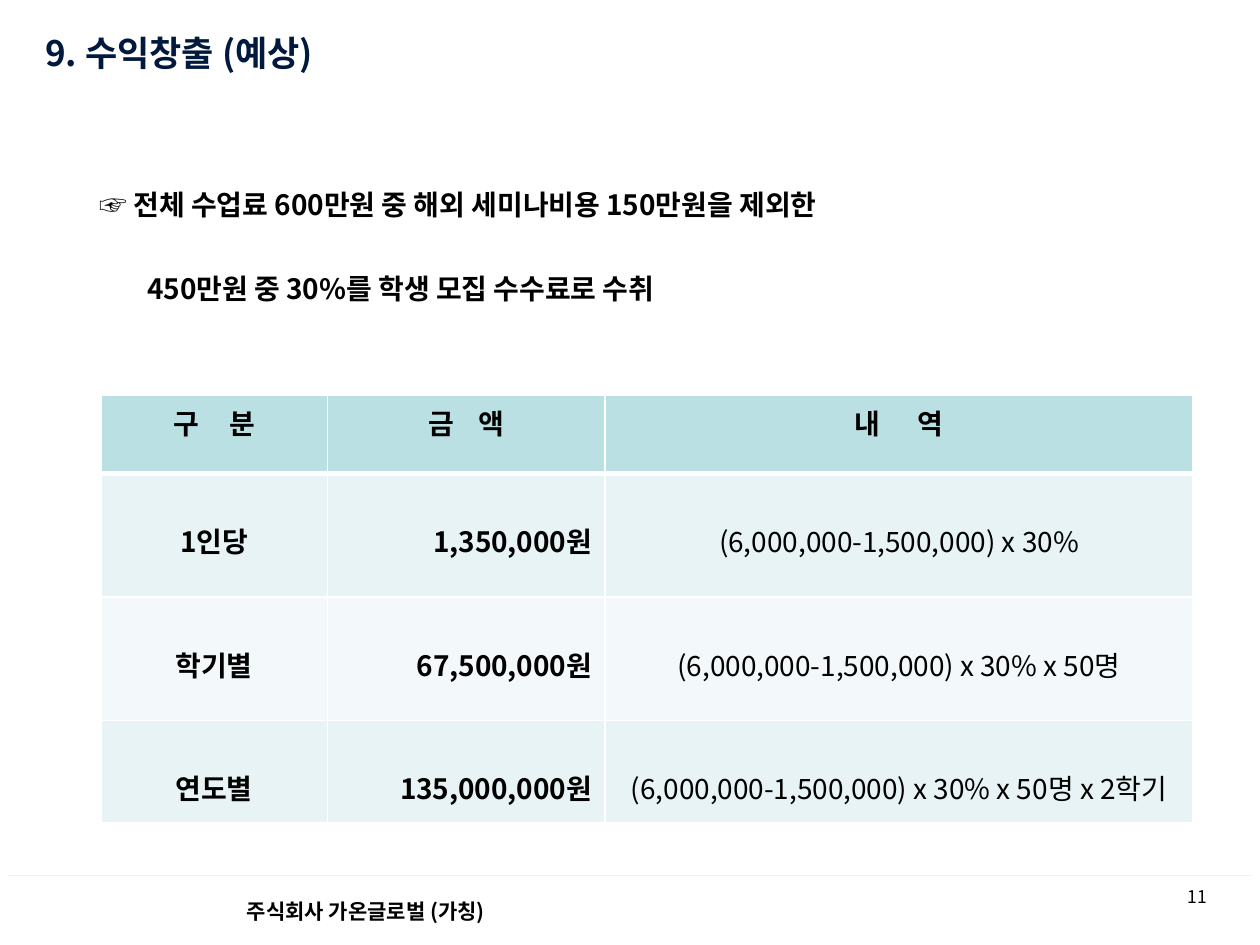
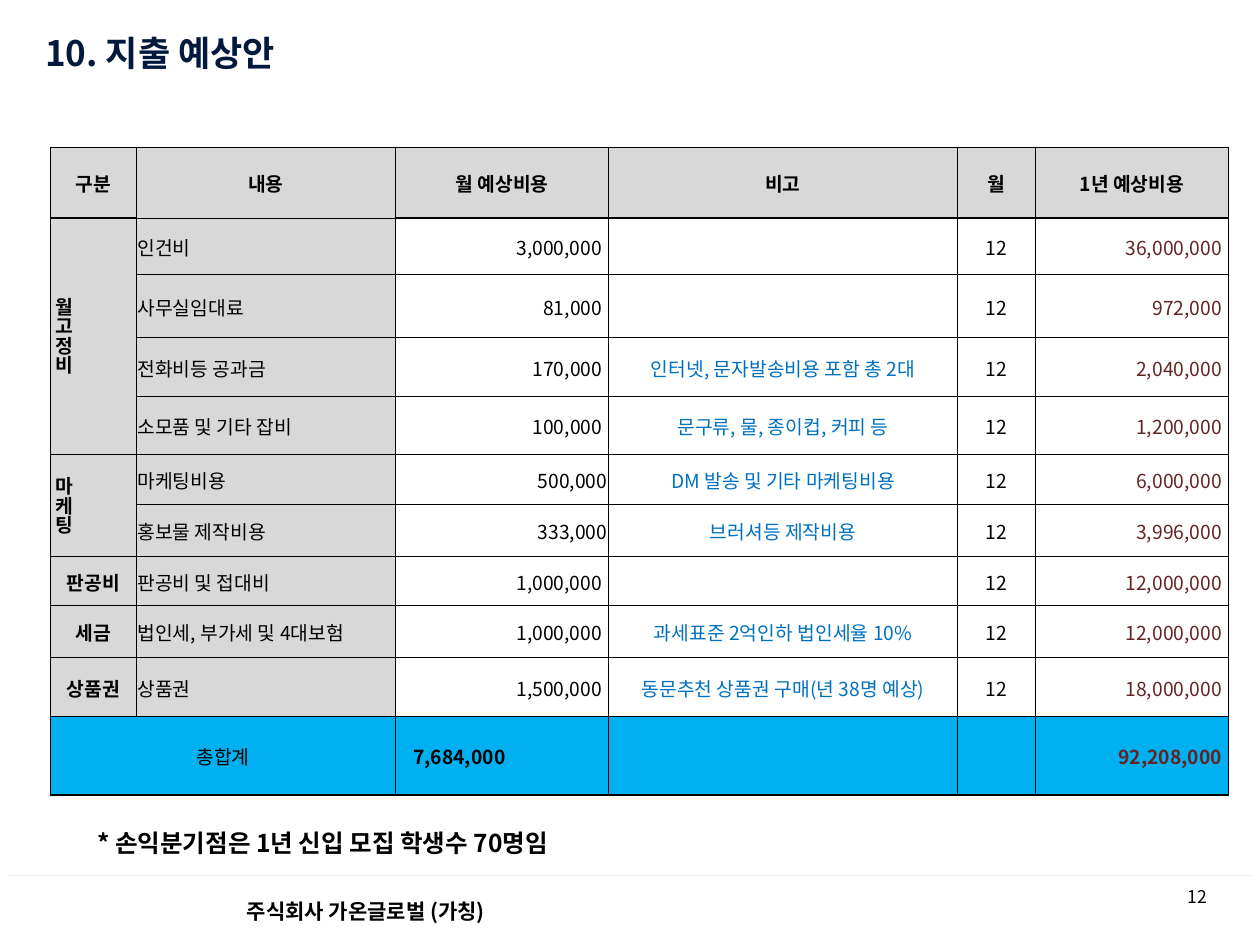
from lxml import etree
from pptx import Presentation
from pptx.dml.color import RGBColor
from pptx.enum.shapes import MSO_CONNECTOR, MSO_SHAPE
from pptx.enum.text import MSO_ANCHOR, PP_ALIGN
from pptx.oxml.ns import qn
from pptx.util import Inches, Pt

LEFT, CENTER, RIGHT = PP_ALIGN.LEFT, PP_ALIGN.CENTER, PP_ALIGN.RIGHT
TOP, MIDDLE = MSO_ANCHOR.TOP, MSO_ANCHOR.MIDDLE
STRAIGHT = MSO_CONNECTOR.STRAIGHT
RECTANGLE = MSO_SHAPE.RECTANGLE

FONT = "Noto Sans CJK KR"
BLACK = RGBColor(0x00, 0x00, 0x00)
WHITE = RGBColor(0xFF, 0xFF, 0xFF)
NAVY = RGBColor(0x00, 0x19, 0x3C)
RULE_GRAY = RGBColor(0xF0, 0xF0, 0xF0)
TEAL = RGBColor(0xBB, 0xE0, 0xE3)
TEAL_LIGHT = RGBColor(0xE7, 0xF3, 0xF4)
TEAL_PALE = RGBColor(0xF3, 0xF9, 0xFA)
GRAY = RGBColor(0xD8, 0xD8, 0xD8)
SKY = RGBColor(0x00, 0xB0, 0xF0)
BLUE = RGBColor(0x00, 0x70, 0xC0)
MAROON = RGBColor(0x63, 0x25, 0x23)

COMPANY = "주식회사 가온글로벌 (가칭)"

REVENUE_HEADERS = [("구", "분", 7), ("금", "액", 5), ("내", "역", 9)]
REVENUE_ROWS = [
    ("1인당", "1,350,000원", "(6,000,000-1,500,000) x 30%"),
    ("학기별", "67,500,000원", "(6,000,000-1,500,000) x 30% x 50명"),
    ("연도별", "135,000,000원", "(6,000,000-1,500,000) x 30% x 50명 x 2학기"),
]
COST_ROWS = [
    ("구분", "내용", "월 예상비용", "비고", "월", "1년 예상비용"),
    ("월고정비", "인건비", "3,000,000", "", "12", "36,000,000"),
    ("", "사무실임대료", "81,000", "", "12", "972,000"),
    ("", "전화비등 공과금", "170,000", "인터넷, 문자발송비용 포함 총 2대", "12", "2,040,000"),
    ("", "소모품 및 기타 잡비", "100,000", "문구류, 물, 종이컵, 커피 등", "12", "1,200,000"),
    ("마케팅", "마케팅비용", "500,000", "DM 발송 및 기타 마케팅비용", "12", "6,000,000"),
    ("", "홍보물 제작비용", "333,000", "브러셔등 제작비용", "12", "3,996,000"),
    ("판공비", "판공비 및 접대비", "1,000,000", "", "12", "12,000,000"),
    ("세금", "법인세, 부가세 및 4대보험", "1,000,000", "과세표준 2억인하 법인세율 10%", "12", "12,000,000"),
    ("상품권", "상품권", "1,500,000", "동문추천 상품권 구매(년 38명 예상)", "12", "18,000,000"),
    ("총합계", "", "7,684,000", "", "", "92,208,000"),
]
COST_ALIGNS = [CENTER, LEFT, RIGHT, CENTER, CENTER, RIGHT]
COST_COLORS = [BLACK, BLACK, BLACK, BLUE, BLACK, MAROON]
TOTAL_ROW = len(COST_ROWS) - 1
MARKETING_ROWS = (5, 6)


class Deck:
    def __init__(self):
        self.prs = Presentation()
        self.prs.slide_width = Inches(10)
        self.prs.slide_height = Inches(7.5)
        self.s = None

    def new_slide(self, title, number):
        self.s = self.prs.slides.add_slide(self.prs.slide_layouts[6])
        self.line(0.06, 6.95, 9.94, 6.95, RULE_GRAY, 0.75)
        self.text(9.27, 6.98, 0.47, 0.31, [str(number)], 10, align=CENTER)
        self.footer()
        self.text(0.26, 0.13, 7.18, 0.58, [title], 20, NAVY, True, anchor=MIDDLE)

    def format(self, p, size, color=BLACK, bold=False, align=LEFT):
        p.alignment = align
        for r in p.runs:
            r.font.size = Pt(size)
            r.font.bold = bold
            r.font.color.rgb = color
            r.font.name = FONT
            etree.SubElement(r.font._element, qn("a:ea"), typeface=FONT)

    def line(self, x1, y1, x2, y2, color, width):
        sp = self.s.shapes.add_connector(
            STRAIGHT, Inches(x1), Inches(y1), Inches(x2), Inches(y2))
        sp.line.color.rgb = color
        sp.line.width = Pt(width)
        etree.SubElement(sp._element.spPr, qn("a:effectLst"))

    def footer(self):
        sp = self.s.shapes.add_shape(
            RECTANGLE, 0, Inches(6.99), Inches(7.75), Inches(0.48))
        sp.shadow.inherit = False
        sp.fill.solid()
        sp.fill.fore_color.rgb = WHITE
        sp.line.fill.background()
        tf = sp.text_frame
        tf.text = COMPANY
        tf.margin_left = Inches(1.96)
        tf.vertical_anchor = MIDDLE
        self.format(tf.paragraphs[0], 12, bold=True)

    def text(self, x, y, w, h, lines, size, color=BLACK, bold=False,
             align=LEFT, anchor=TOP):
        sp = self.s.shapes.add_textbox(Inches(x), Inches(y), Inches(w), Inches(h))
        tf = sp.text_frame
        tf.word_wrap = True
        tf.vertical_anchor = anchor
        tf.text = "\n".join(lines)
        for p in tf.paragraphs:
            self.format(p, size, color, bold, align)
        return tf

    def table(self, x, y, widths, heights):
        table = self.s.shapes.add_table(
            len(heights), len(widths), Inches(x), Inches(y),
            Inches(sum(widths)), Inches(sum(heights))).table
        table.first_row = table.horz_banding = False
        for column, width in zip(table.columns, widths):
            column.width = Inches(width)
        for row, height in zip(table.rows, heights):
            row.height = Inches(height)
        return table

    def cell(self, cell, text, size, fill, color=BLACK, bold=False,
             align=CENTER, anchor=TOP, margins=(0.1, 0.05, 0.1, 0.05)):
        cell.margin_left, cell.margin_top, cell.margin_right, cell.margin_bottom = map(
            Inches, margins)
        cell.vertical_anchor = anchor
        cell.fill.solid()
        cell.fill.fore_color.rgb = fill
        cell.text = text
        self.format(cell.text_frame.paragraphs[0], size, color, bold, align)

    def borders(self, cell, color, left, right, top, bottom):
        tcPr = cell._tc.get_or_add_tcPr()
        for i, (side, width) in enumerate(zip("LRTB", (left, right, top, bottom))):
            ln = etree.Element(qn(f"a:ln{side}"), w=str(Pt(width)))
            fill = etree.SubElement(ln, qn("a:solidFill"))
            etree.SubElement(fill, qn("a:srgbClr"), val=str(color))
            tcPr.insert(i, ln)


def build_revenue(deck):
    deck.new_slide("9. 수익창출 (예상)", 11)
    tf = deck.text(0.69, 1.31, 9.31, 2.86, [
        "☞ 전체 수업료 600만원 중 해외 세미나비용 150만원을 제외한",
        "450만원 중 30%를 학생 모집 수수료로 수취",
    ], 16, bold=True)
    for p, spacing, indent in zip(tf.paragraphs, (1.5, 2.5), (-0.38, 0)):
        p.line_spacing = spacing
        pPr = p._p.get_or_add_pPr()
        pPr.set("marL", str(Inches(0.38)))
        pPr.set("indent", str(Inches(indent)))

    table = deck.table(0.8, 3.14, [1.8, 2.2, 4.67], [0.62, 0.98, 0.98, 0.81])
    for col, (first, last, spread) in enumerate(REVENUE_HEADERS):
        cell = table.cell(0, col)
        deck.cell(cell, first + " ", 16, TEAL, bold=True)
        p = cell.text_frame.paragraphs[0]
        p.runs[0].font._element.set("spc", str(spread * 100))
        r = p.add_run()
        r.text = last
        deck.format(p, 16, bold=True, align=CENTER)
        deck.borders(cell, WHITE, 1, 1, 1, 3)
    for row, values in enumerate(REVENUE_ROWS, 1):
        for col, value in enumerate(values):
            cell = table.cell(row, col)
            deck.cell(cell, value, 16, TEAL_LIGHT if row % 2 else TEAL_PALE,
                      bold=col < 2, align=RIGHT if col == 1 else CENTER,
                      margins=(0.1, 0.37, 0.1, 0.05))
            deck.borders(cell, WHITE, 1, 1, 3 if row == 1 else 1, 1)


def cost_row_line(edge, col):
    if edge == 1 and col == 1:
        return 0.5
    return 1 if edge in (0, 1, TOTAL_ROW, TOTAL_ROW + 1) else 0.5


def cost_column_line(edge, row):
    return 0.5 if edge == 1 and row < TOTAL_ROW else 1


def build_costs(deck):
    deck.new_slide("10. 지출 예상안", 12)
    table = deck.table(
        0.4, 1.17, [0.68, 2.06, 1.69, 2.77, 0.62, 1.53],
        [0.56, 0.45, 0.5, 0.47, 0.46, 0.39, 0.42, 0.39, 0.41, 0.47, 0.62])
    for row, values in enumerate(COST_ROWS):
        header, total = row == 0, row == TOTAL_ROW
        for col, value in enumerate(values):
            fill = SKY if total else GRAY if header or col < 2 else WHITE
            bold = header or (col in (2, 5) if total else col == 0)
            align = CENTER if header else COST_ALIGNS[col]
            left = right = 0.01
            if total and col == 2:
                align, left = LEFT, 0.14
            elif align == RIGHT and not (col == 2 and row in MARKETING_ROWS):
                right = 0.05
            cell = table.cell(row, col)
            deck.cell(cell, value, 11, fill, BLACK if header else COST_COLORS[col],
                      bold, align, MIDDLE, (left, 0.01, right, 0))
            deck.borders(cell, BLACK,
                         cost_column_line(col, row), cost_column_line(col + 1, row),
                         cost_row_line(row, col), cost_row_line(row + 1, col))
    for first, last in ((1, 4), MARKETING_ROWS):
        cell = table.cell(first, 0)
        cell.merge(table.cell(last, 0))
        cell._tc.get_or_add_tcPr().set("vert", "eaVert")
    table.cell(TOTAL_ROW, 0).merge(table.cell(TOTAL_ROW, 1))
    deck.text(0.42, 6.52, 4.28, 0.34, ["* 손익분기점은 1년 신입 모집 학생수 70명임"],
              14, bold=True, align=CENTER)


def main():
    deck = Deck()
    build_revenue(deck)
    build_costs(deck)
    deck.prs.save("out.pptx")


if __name__ == "__main__":
    main()
